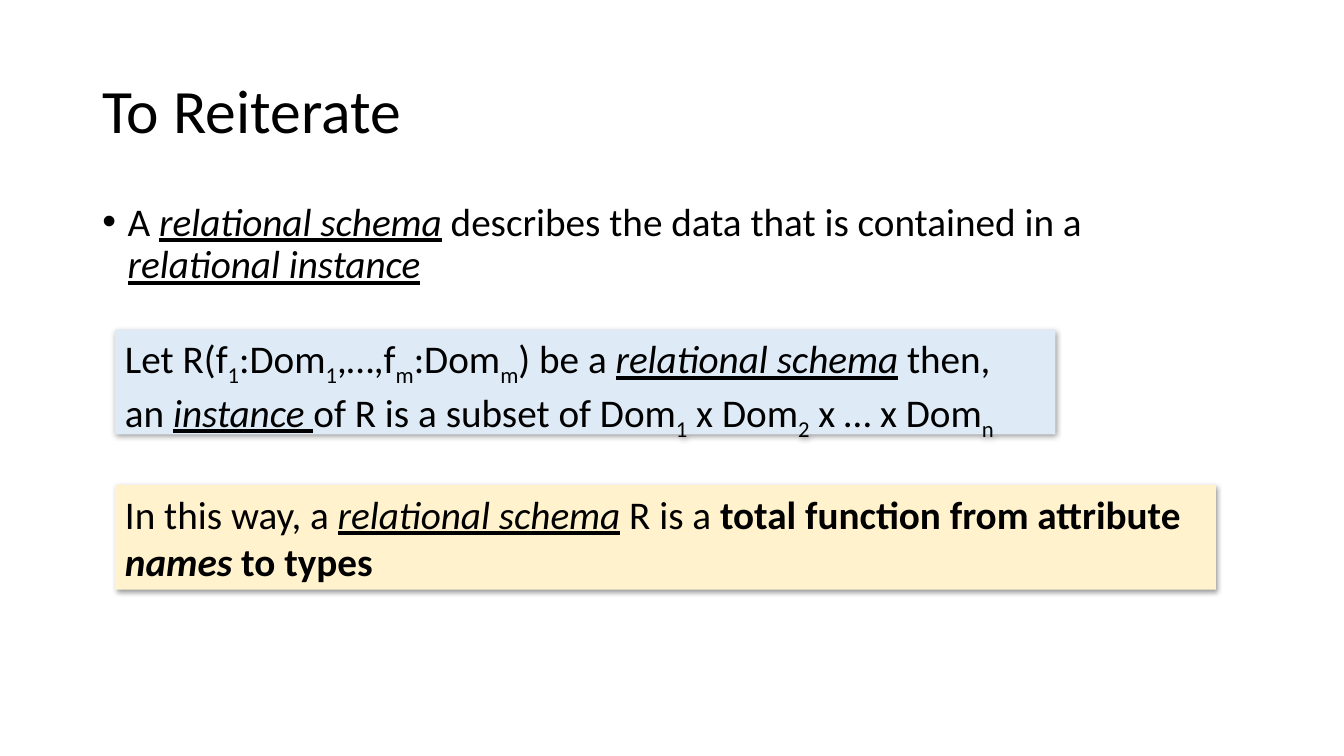
"""Build the slide that restates relational schemas and instances."""
from dataclasses import dataclass, field
from typing import Optional

from lxml import etree
from pptx import Presentation
from pptx.dml.color import RGBColor
from pptx.enum.shapes import MSO_SHAPE
from pptx.enum.text import MSO_ANCHOR, MSO_AUTO_SIZE, PP_ALIGN
from pptx.oxml.ns import qn
from pptx.util import Cm, Pt

RECT = MSO_SHAPE.RECTANGLE
TOP, MIDDLE = MSO_ANCHOR.TOP, MSO_ANCHOR.MIDDLE
NO_FIT, GROW = MSO_AUTO_SIZE.NONE, MSO_AUTO_SIZE.SHAPE_TO_FIT_TEXT
LEFT = PP_ALIGN.LEFT
BLANK = 6


@dataclass(frozen=True)
class Theme:
    """Colours, font and type sizes of the slide."""
    font: str = "Calibri"
    ink: str = "000000"
    blue: str = "DEEBF7"
    cream: str = "FFF2CC"
    title: int = 44
    body: int = 28


THEME = Theme()
TERM = {"italic": True, "underline": True}
ITALIC = {"italic": True}
BOLD = {"bold": True}


@dataclass(frozen=True)
class Span:
    """A stretch of text with one format."""
    text: str
    style: dict = field(default_factory=dict)
    sub: bool = False


@dataclass(frozen=True)
class Block:
    """A box of text, filled when it has a colour."""
    left: float
    top: float
    width: float
    height: float
    lines: list[list[Span]]
    size: int = THEME.body
    fill: Optional[str] = None
    anchor: MSO_ANCHOR = TOP
    spacing: Optional[float] = None
    before: int = 0
    bullet: bool = False


def sub(text: str) -> Span:
    """Return a subscript span."""
    return Span(text, sub=True)


BLOCKS = [
    Block(2.33, 4.98, 26.04, 12.04, [[
        Span("A "), Span("relational schema", TERM),
        Span(" describes the data that is contained in a "),
        Span("relational instance", TERM),
    ]], spacing=0.9, before=10, bullet=True),
    Block(2.33, 1.02, 29.21, 3.68, [[Span("To Reiterate")]],
          size=THEME.title, anchor=MIDDLE, spacing=0.9),
    Block(2.9, 8.31, 23.7, 2.64, [
        [Span("Let R(f"), sub("1"), Span(":Dom"), sub("1"), Span(",…,f"),
         sub("m"), Span(":Dom"), sub("m"), Span(") be a "),
         Span("relational schema", TERM), Span(" ", ITALIC), Span("then,")],
        [Span("an "), Span("instance ", TERM),
         Span("of R is a subset of Dom"), sub("1"), Span(" x Dom"), sub("2"),
         Span(" x … x Dom"), sub("n")],
    ], fill=THEME.blue),
    Block(2.9, 12.22, 27.74, 2.64, [[
        Span("In this way, a "), Span("relational schema", TERM),
        Span(" ", ITALIC), Span("R is a "),
        Span("total function from attribute ", BOLD),
        Span("names", BOLD | ITALIC), Span(" to types", BOLD),
    ]], fill=THEME.cream),
]


def set_attrs(target: object, values: dict) -> None:
    """Set each attribute named in values."""
    for name, value in values.items():
        setattr(target, name, value)


def add_shadow(sp) -> None:
    """Give a shape a soft shadow towards the lower right."""
    effects = etree.SubElement(sp._element.spPr, qn("a:effectLst"))
    shadow = etree.SubElement(effects, qn("a:outerShdw"), {
        "blurRad": str(Pt(4)), "dist": str(Pt(1)), "dir": str(45 * 60000),
        "algn": "tl", "rotWithShape": "0"})
    colour = etree.SubElement(shadow, qn("a:srgbClr"), val=THEME.ink)
    etree.SubElement(colour, qn("a:alpha"), val="40000")


def add_bullet(p) -> None:
    """Give a paragraph a bullet with a hanging indent."""
    props = p._p.get_or_add_pPr()
    props.set("marL", str(Cm(0.64)))
    props.set("indent", str(-Cm(0.64)))
    etree.SubElement(props, qn("a:buFont"), typeface="Arial")
    etree.SubElement(props, qn("a:buChar"), char="•")


def add_span(p, span: Span, size: int) -> None:
    """Add one formatted run to a paragraph."""
    r = p.add_run()
    r.text = span.text
    set_attrs(r.font, {"name": THEME.font, "size": Pt(size)} | span.style)
    r.font.color.rgb = RGBColor.from_string(THEME.ink)
    if span.sub:
        r.font._element.set("baseline", "-25000")


def add_block(slide, block: Block) -> None:
    """Draw a block and its text."""
    place = [Cm(v) for v in (block.left, block.top, block.width, block.height)]
    if block.fill:
        sp = slide.shapes.add_shape(RECT, *place)
        sp.fill.solid()
        sp.fill.fore_color.rgb = RGBColor.from_string(block.fill)
        sp.line.fill.background()
        add_shadow(sp)
    else:
        sp = slide.shapes.add_textbox(*place)
    tf = sp.text_frame
    set_attrs(tf, {"word_wrap": True, "vertical_anchor": block.anchor,
                   "auto_size": GROW if block.fill else NO_FIT})
    for i, line in enumerate(block.lines):
        p = tf.add_paragraph() if i else tf.paragraphs[0]
        set_attrs(p, {"alignment": LEFT, "line_spacing": block.spacing,
                      "space_before": Pt(block.before)})
        if block.bullet:
            add_bullet(p)
        for span in line:
            add_span(p, span, block.size)


def main() -> None:
    """Build and save the slide."""
    prs = Presentation()
    set_attrs(prs, {"slide_width": Cm(33.87), "slide_height": Cm(19.05)})
    slide = prs.slides.add_slide(prs.slide_layouts[BLANK])
    for block in BLOCKS:
        add_block(slide, block)
    prs.save("out.pptx")


if __name__ == "__main__":
    main()
